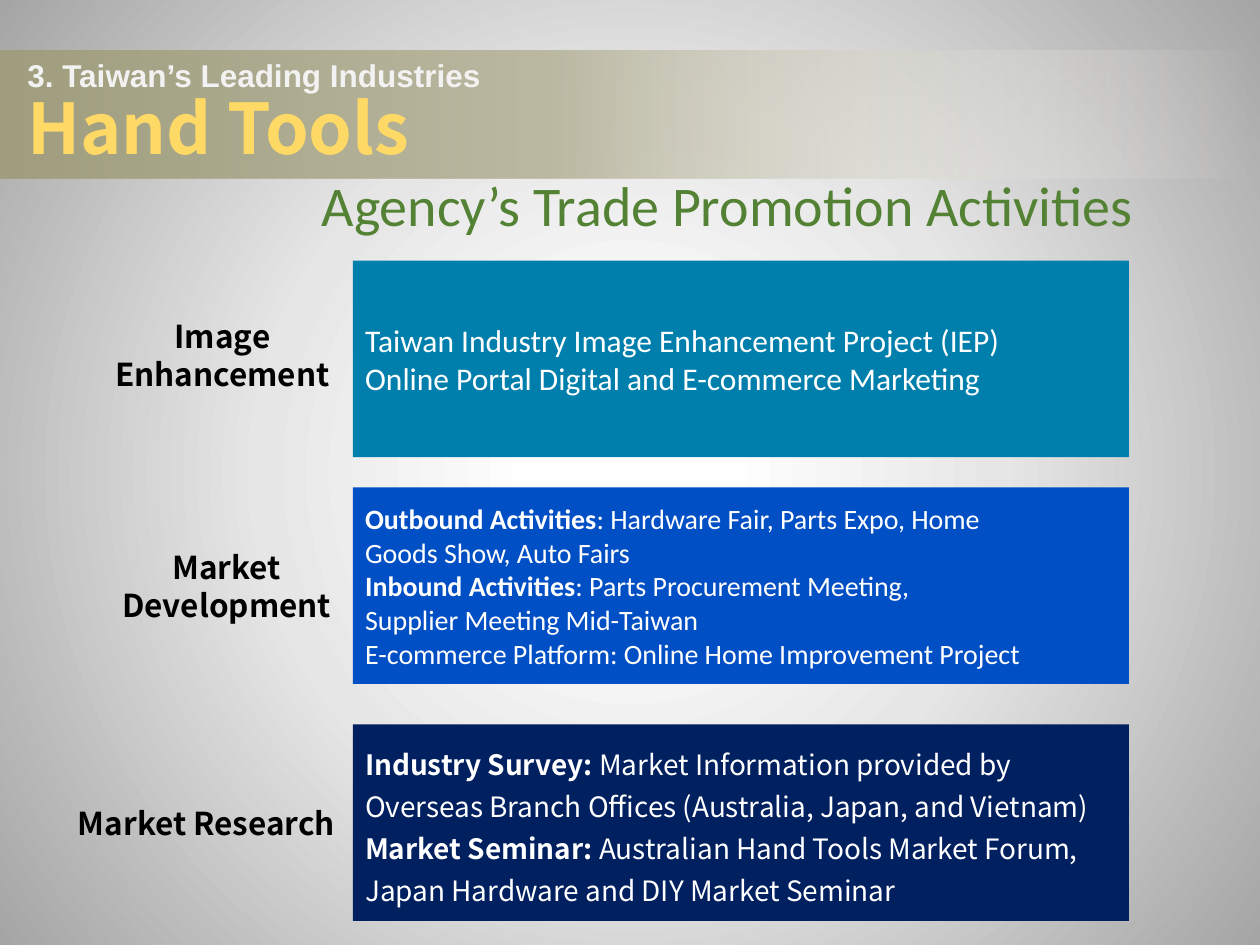
import pptx
import pptx.dml.color
import pptx.enum.shapes
import pptx.enum.text
import pptx.oxml
import pptx.oxml.ns
import pptx.util

Pt = pptx.util.Pt
RGBColor = pptx.dml.color.RGBColor
Align = pptx.enum.text.PP_ALIGN
Anchor = pptx.enum.text.MSO_ANCHOR

BLACK = RGBColor(0x00, 0x00, 0x00)
WHITE = RGBColor(0xFF, 0xFF, 0xFF)
LIGHT_GREY = RGBColor(0xE7, 0xE6, 0xE6)
MID_GREY = RGBColor(0xA5, 0xA5, 0xA5)
PALE_GREY = RGBColor(0xF2, 0xF2, 0xF2)
GREEN = RGBColor(0x54, 0x82, 0x35)
GOLD = RGBColor(0xFF, 0xD9, 0x66)
TEAL = RGBColor(0x00, 0x7F, 0xAC)
BLUE = RGBColor(0x00, 0x4F, 0xC4)
NAVY = RGBColor(0x00, 0x20, 0x60)
OLIVE = RGBColor(0x9F, 0x9D, 0x7D)
SAND = RGBColor(0xBA, 0xB8, 0xA1)
PALE_SAND = RGBColor(0xDB, 0xDA, 0xCF)

SANS = "Noto Sans CJK SC"
RADIAL = ('<a:path path="circle"><a:fillToRect l="50000" t="50000" '
          'r="50000" b="50000"/></a:path>')
LINEAR = '<a:lin ang="0" scaled="0"/>'


class SlideBuilder:
    def __init__(self, slide):
        self.slide = slide

    def gradient(self, owner, fill, stops, direction):
        """Fill with stops of (position %, colour, opacity %)."""
        fill.gradient()
        old = owner.element.find(".//" + pptx.oxml.ns.qn("a:gradFill"))
        stop_xml = "".join(
            f'<a:gs pos="{position * 1000}"><a:srgbClr val="{color}">'
            f'<a:alpha val="{opacity * 1000}"/></a:srgbClr></a:gs>'
            for position, color, opacity in stops)
        new = pptx.oxml.parse_xml(
            f'<a:gradFill {pptx.oxml.ns.nsdecls("a")} rotWithShape="1">'
            f'<a:gsLst>{stop_xml}</a:gsLst>{direction}</a:gradFill>')
        old.getparent().replace(old, new)

    def rectangle(self, left, top, width, height):
        shape = self.slide.shapes.add_shape(
            pptx.enum.shapes.MSO_SHAPE.RECTANGLE,
            Pt(left), Pt(top), Pt(width), Pt(height))
        shape.shadow.inherit = False
        shape.line.fill.background()
        return shape

    def run(self, paragraph, text, size, font, color, bold=False):
        run = paragraph.add_run()
        run.text = text
        run.font.size = Pt(size)
        run.font.name = font
        run.font.bold = bold
        run.font.color.rgb = color

    def text_box(self, left, top, width, height, anchor=Anchor.TOP,
                 align=Align.LEFT):
        """Add a wrapping text box and return its frame."""
        frame = self.slide.shapes.add_textbox(
            Pt(left), Pt(top), Pt(width), Pt(height)).text_frame
        frame.word_wrap = True
        frame.vertical_anchor = anchor
        frame.paragraphs[0].alignment = align
        return frame

    def label(self, text, left, top, width, height, align):
        frame = self.text_box(left, top, width, height, align=align)
        self.run(frame.paragraphs[0], text, 18, SANS, BLACK, True)

    def panel(self, top, color, paragraphs, size, font, spacing=None):
        """Add a coloured panel; each paragraph is (bold lead, plain text)."""
        shape = self.rectangle(201.6, top, 443.5, 112.3)
        shape.fill.solid()
        shape.fill.fore_color.rgb = color
        frame = shape.text_frame
        frame.word_wrap = True
        frame.vertical_anchor = Anchor.MIDDLE
        for index, (lead, text) in enumerate(paragraphs):
            paragraph = frame.add_paragraph() if index else frame.paragraphs[0]
            paragraph.alignment = Align.LEFT
            if spacing:
                paragraph.line_spacing = Pt(spacing)
            if lead:
                self.run(paragraph, lead, size, font, WHITE, True)
            self.run(paragraph, text, size, font, WHITE)


def main():
    presentation = pptx.Presentation()
    presentation.slide_width, presentation.slide_height = Pt(720), Pt(540)
    slide = presentation.slides.add_slide(presentation.slide_layouts[6])
    builder = SlideBuilder(slide)
    builder.gradient(slide, slide.background.fill, [
        (12, WHITE, 100), (47, LIGHT_GREY, 100), (100, MID_GREY, 100)], RADIAL)

    subtitle = builder.text_box(96.5, 93.6, 563.8, 46, align=Align.CENTER)
    subtitle.margin_left = Pt(82)
    builder.run(subtitle.paragraphs[0], "Agency’s Trade Promotion Activities",
                32, "Calibri", GREEN)

    builder.label("Image Enhancement", 37.4, 177.8, 179.3, 51, Align.CENTER)
    builder.label("Market Development", 42.5, 309.6, 174.2, 51, Align.CENTER)
    builder.label("Market Research", 37.4, 455.8, 174.2, 29, Align.LEFT)

    builder.panel(149, TEAL, [
        ("", "Taiwan Industry Image Enhancement Project (IEP)"),
        ("", "Online Portal Digital and E-commerce Marketing"),
    ], 18, "Calibri")
    builder.panel(278.6, BLUE, [
        ("Outbound Activities", ": Hardware Fair, Parts Expo, Home"),
        ("", "Goods Show, Auto Fairs"),
        ("Inbound Activities", ": Parts Procurement Meeting,"),
        ("", "Supplier Meeting Mid-Taiwan"),
        ("", "E-commerce Platform: Online Home Improvement Project"),
    ], 16, "Calibri")
    builder.panel(414, NAVY, [
        ("Industry Survey: ", "Market Information provided by Overseas "
         "Branch Offices (Australia, Japan, and Vietnam)"),
        ("Market Seminar: ", "Australian Hand Tools Market Forum, "
         "Japan Hardware and DIY Market Seminar"),
    ], 16, SANS, spacing=24)

    band = builder.rectangle(0, 28.8, 760.3, 73.4)
    builder.gradient(band, band.fill, [
        (1, OLIVE, 100), (41, SAND, 100), (72, PALE_SAND, 37),
        (94, WHITE, 0)], LINEAR)

    title = builder.text_box(8.6, 28.8, 702.7, 73.4, Anchor.MIDDLE)
    heading = title.paragraphs[0]
    heading.line_spacing = 0.9
    builder.run(heading, "3. Taiwan’s Leading Industries", 18, "Arial",
                PALE_GREY, True)
    heading.add_line_break()
    builder.run(heading, "Hand Tools", 40, SANS, GOLD, True)

    presentation.save("out.pptx")


if __name__ == "__main__":
    main()
